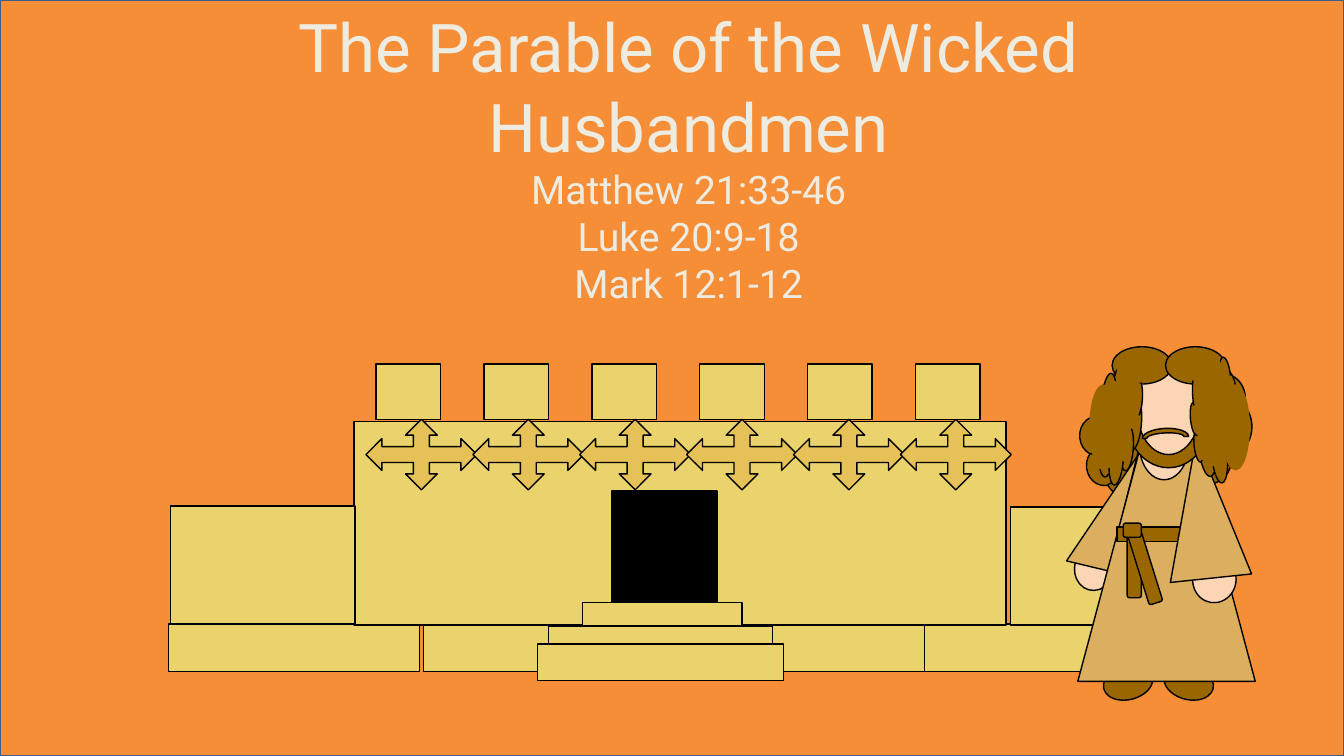
from dataclasses import dataclass

from pptx import Presentation
from pptx.dml.color import RGBColor
from pptx.enum.shapes import MSO_SHAPE
from pptx.enum.text import MSO_ANCHOR, MSO_AUTO_SIZE, PP_ALIGN
from pptx.util import Inches, Pt


@dataclass(frozen=True)
class Theme:
    font: str = "Roboto"
    title_size: int = 48
    reference_size: int = 28
    text: str = "EEECE1"
    sky: str = "F68E38"
    frame: str = "3A5F8C"
    outline: str = "000000"
    stone: str = "EAD26C"
    ornament: str = "E6C158"
    doorway: str = "000000"
    hair: str = "996600"
    skin: str = "FCD5B5"
    robe: str = "DBAF5F"


THEME = Theme()


def draw(shapes, kind, box, fill, line=THEME.outline, rotation=0, adjust=()):
    """Add one filled, outlined shape; box is left, top, width, height."""
    sp = shapes.add_shape(kind, *[Inches(v) for v in box])
    sp.shadow.inherit = False
    sp.fill.solid()
    sp.fill.fore_color.rgb = RGBColor.from_string(fill)
    sp.line.color.rgb = RGBColor.from_string(line)
    sp.line.width = Pt(1)
    sp.rotation = rotation
    for i, value in enumerate(adjust):
        sp.adjustments[i] = value
    return sp


def fill_text(placeholder, box, lines, size):
    """Place a text placeholder and write one centred paragraph per line."""
    placeholder.left, placeholder.top, placeholder.width, placeholder.height = [
        Inches(v) for v in box]
    tf = placeholder.text_frame
    tf.word_wrap = True
    tf.auto_size = MSO_AUTO_SIZE.NONE
    tf.vertical_anchor = MSO_ANCHOR.TOP
    for i, line in enumerate(lines):
        p = tf.add_paragraph() if i else tf.paragraphs[0]
        p.alignment = PP_ALIGN.CENTER
        p.space_before = Pt(0)
        r = p.add_run()
        r.text = line
        r.font.name = THEME.font
        r.font.size = Pt(size)
        r.font.color.rgb = RGBColor.from_string(THEME.text)


def add_heading(s, left, top, width):
    title, references = s.shapes.title, s.placeholders[1]
    fill_text(title, (left, top, width, 1.64),
              ["The Parable of the Wicked Husbandmen"], THEME.title_size)
    fill_text(references, (left, top + 1.59, width, 1.54),
              ["Matthew 21:33-46", "Luke 20:9-18", "Mark 12:1-12"],
              THEME.reference_size)
    # Bring the text in front of the backdrop
    for placeholder in (title, references):
        s.shapes.element.append(placeholder.element)


def add_temple(s, left, top):
    shapes = s.shapes.add_group_shape().shapes

    def block(x, y, w, h, fill=THEME.stone, kind=MSO_SHAPE.RECTANGLE):
        draw(shapes, kind, (left + x, top + y, w, h), fill)

    # Foundation, main wall and battlements
    for x in (0, 2.53, 5.01, 7.5):
        block(x, 2.58, 2.49, 0.47)
    block(1.84, 0.57, 6.47, 2.02)
    for i in range(6):
        block(2.06 + 1.07 * i, 0, 0.64, 0.55)

    # Side wings and doorway
    block(0.02, 1.41, 1.83, 1.17)
    block(8.35, 1.42, 1.62, 1.17)
    block(4.4, 1.26, 1.04, 1.17, THEME.doorway)

    # Row of ornaments
    for i in range(6):
        block(1.96 + 1.06 * i, 0.55, 1.1, 0.7, THEME.ornament,
              MSO_SHAPE.QUAD_ARROW)

    # Steps
    for x, y, w, h in ((4.11, 2.37, 1.58, 0.28),
                       (3.77, 2.6, 2.22, 0.36),
                       (3.66, 2.78, 2.44, 0.36)):
        block(x, y, w, h)


def add_teacher(s, left, top):
    shapes = s.shapes.add_group_shape().shapes
    oval, cloud, arc = MSO_SHAPE.OVAL, MSO_SHAPE.CLOUD, MSO_SHAPE.BLOCK_ARC
    trapezoid, strap = MSO_SHAPE.TRAPEZOID, MSO_SHAPE.ROUNDED_RECTANGLE
    hair, skin, robe = THEME.hair, THEME.skin, THEME.robe

    # Kind, box, fill, rotation, adjustments; from back to front
    parts = (
        # Back hair, left arm and shoulders
        (cloud, (0.05, 0.15, 1.71, 1.42), hair, 354.5, ()),
        (oval, (0, 1.96, 0.4, 0.46), skin, 16.3, ()),
        (trapezoid, (0.05, 1.01, 0.93, 1.24), robe, 13.5, (0.5,)),
        (trapezoid, (0.43, 0.97, 0.95, 0.87), robe, 0, (0.249,)),
        # Feet and robe
        (oval, (0.88, 3.16, 0.5, 0.34), hair, 14.8, ()),
        (oval, (0.28, 3.16, 0.5, 0.34), hair, 345.2, ()),
        (trapezoid, (0.03, 1.02, 1.76, 2.3), robe, 0, (0.349,)),
        # Belt
        (MSO_SHAPE.RECTANGLE, (0.42, 1.79, 0.95, 0.14), hair, 0, ()),
        (strap, (0.52, 1.85, 0.14, 0.64), hair, 0, ()),
        (strap, (0.62, 1.78, 0.14, 0.78), hair, 342.7, ()),
        (strap, (0.48, 1.75, 0.18, 0.14), hair, 0, ()),
        # Neck and right arm
        (oval, (0.64, 0.62, 0.49, 0.7), skin, 0, ()),
        (oval, (1.17, 2.08, 0.43, 0.46), skin, 8.9, ()),
        (trapezoid, (0.88, 1.04, 0.81, 1.26), robe, 354, (0.452,)),
        # Head, fringe, beard and moustache
        (oval, (0.49, 0.13, 0.83, 1.04), skin, 0, ()),
        (oval, (0.37, 0, 0.59, 0.37), hair, 0, ()),
        (oval, (0.9, 0, 0.59, 0.37), hair, 0, ()),
        (arc, (0.49, 0.08, 0.88, 1.12), hair, 180, (103.792, 209.11, 0.149)),
        (arc, (0.67, 0.81, 0.46, 0.18), hair, 357.3, ()),
        # Side hair
        (cloud, (1.15, 0.11, 0.49, 1.24), hair, 354.5, ()),
        (cloud, (0.21, 0.16, 0.45, 1.21), hair, 4.6, ()),
    )
    for kind, (x, y, w, h), fill, rotation, adjust in parts:
        draw(shapes, kind, (left + x, top + y, w, h), fill,
             rotation=rotation, adjust=adjust)

    # Tufts that blend the hair together
    for x, y, w, h in ((0.42, 0.06, 0.34, 0.3), (1.11, 0.06, 0.34, 0.3),
                       (1.46, 0.38, 0.27, 0.84), (0.15, 0.38, 0.27, 0.84)):
        draw(shapes, oval, (left + x, top + y, w, h), hair, line=hair)


def main():
    prs = Presentation()
    prs.slide_width, prs.slide_height = Inches(13.33), Inches(7.5)
    s = prs.slides.add_slide(prs.slide_layouts[0])
    draw(s.shapes, MSO_SHAPE.RECTANGLE, (0, 0, 13.33, 7.5), THEME.sky,
         line=THEME.frame)
    add_temple(s, 1.67, 3.61)
    add_teacher(s, 10.66, 3.44)
    add_heading(s, 2.22, 0, 9.22)
    prs.save("out.pptx")


if __name__ == "__main__":
    main()
